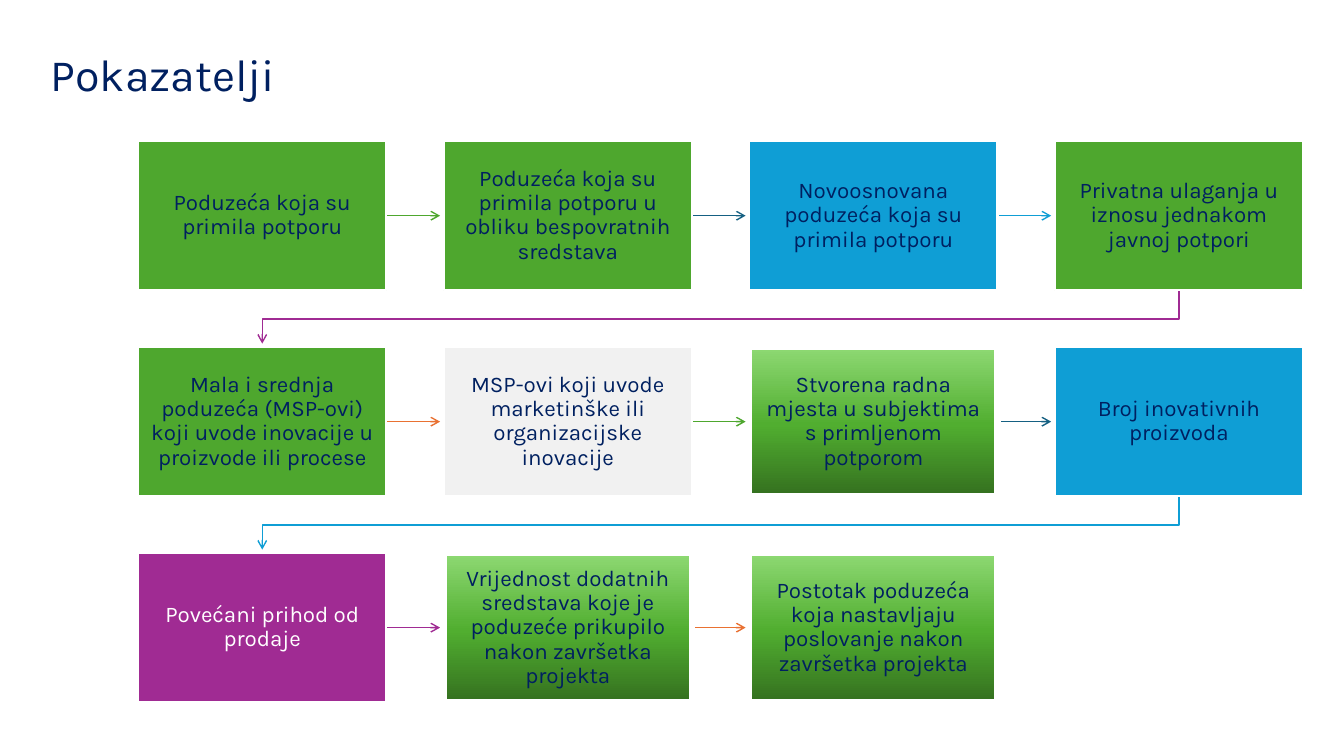
"""Build the slide of support indicators as a snaking flow of boxes."""
from dataclasses import dataclass
from itertools import cycle

from lxml import etree
from pptx import Presentation
from pptx.dml.color import RGBColor
from pptx.enum import shapes, text
from pptx.oxml import parse_xml
from pptx.oxml.ns import nsdecls, qn
from pptx.util import Cm, Pt

TITLE = "Pokazatelji"
INDICATORS = [
    ("Poduzeća koja su primila potporu", "green"),
    ("Poduzeća koja su primila potporu u obliku bespovratnih sredstava", "green"),
    ("Novoosnovana poduzeća koja su primila potporu", "blue"),
    ("Privatna ulaganja u iznosu jednakom javnoj potpori", "green"),
    ("Mala i srednja poduzeća (MSP-ovi) koji uvode inovacije u proizvode ili procese", "green"),
    ("MSP-ovi koji uvode marketinške ili organizacijske inovacije", "grey"),
    ("Stvorena radna mjesta u subjektima s primljenom potporom", "gradient"),
    ("Broj inovativnih proizvoda", "blue"),
    ("Povećani prihod od prodaje", "purple"),
    ("Vrijednost dodatnih sredstava koje je poduzeće prikupilo nakon završetka projekta", "gradient"),
    ("Postotak poduzeća koja nastavljaju poslovanje nakon završetka projekta", "gradient"),
]
ARROW_COLOURS = ["green", "teal", "blue", "purple", "orange"]


@dataclass(frozen=True)
class Theme:
    """Colours, fonts and type sizes."""
    font: str = "Karla"
    title_size: int = 32
    box_size: int = 16
    navy: str = "002060"
    white: str = "FFFFFF"
    green: str = "4EA72E"
    teal: str = "156082"
    blue: str = "0F9ED5"
    purple: str = "A02B93"
    orange: str = "E97132"
    grey: str = "F1F1F1"
    gradient: tuple = ((0, "34701F"), (48, "51AE30"), (100, "8ED973"))

    def colour(self, name):
        """Return a named colour."""
        return RGBColor.from_string(getattr(self, name))


THEME = Theme()
COLUMNS = 4
LEFT, TOP = Cm(3.48), Cm(3.56)
WIDTH, HEIGHT = Cm(6.26), Cm(3.75)
COLUMN_STEP, ROW_STEP = Cm(7.7), Cm(5.19)
ARROW_LENGTH, ELBOW_DROP = Cm(1.35), Cm(0.73)


def position(index):
    """Return the left and top of a box in the grid."""
    row, column = divmod(index, COLUMNS)
    return LEFT + column * COLUMN_STEP, TOP + row * ROW_STEP


def write(shape, words, size, colour, alignment):
    """Set the one paragraph of a shape."""
    frame = shape.text_frame
    frame.text = words
    frame.word_wrap = True
    frame.auto_size = text.MSO_AUTO_SIZE.NONE
    frame.vertical_anchor = text.MSO_ANCHOR.MIDDLE
    paragraph = frame.paragraphs[0]
    paragraph.alignment = alignment
    paragraph.line_spacing = 0.9
    paragraph.font.name = THEME.font
    paragraph.font.size = Pt(size)
    paragraph.font.color.rgb = THEME.colour(colour)
    return frame


def fill_gradient(shape):
    """Fill a shape with the upward gradient."""
    stops = "".join(
        f'<a:gs pos="{place * 1000}"><a:srgbClr val="{colour}"/></a:gs>'
        for place, colour in THEME.gradient
    )
    gradient = parse_xml(
        f'<a:gradFill {nsdecls("a")} rotWithShape="1"><a:gsLst>{stops}</a:gsLst>'
        '<a:lin ang="16200000" scaled="0"/></a:gradFill>'
    )
    shape.fill.background()
    properties = shape._element.spPr
    properties.replace(properties.find(qn("a:noFill")), gradient)


def add_arrow(slide, index, colour):
    """Draw the arrow from one box to the next."""
    left, top = position(index)
    if (index + 1) % COLUMNS:
        start, middle = left + WIDTH, top + HEIGHT // 2
        arrow = slide.shapes.add_connector(
            shapes.MSO_CONNECTOR.STRAIGHT, start, middle, start + ARROW_LENGTH, middle
        )
        etree.SubElement(arrow._element.spPr, qn("a:effectLst"))
    else:
        start, bottom = left + WIDTH // 2, top + HEIGHT
        end = LEFT + WIDTH // 2
        turn = bottom + ELBOW_DROP
        builder = slide.shapes.build_freeform(start, bottom)
        builder.add_line_segments(
            [(start, turn), (end, turn), (end, bottom + ARROW_LENGTH)], close=False
        )
        arrow = builder.convert_to_shape()
        arrow.fill.background()
        arrow.shadow.inherit = False
    arrow.line.width = Pt(1)
    arrow.line.color.rgb = THEME.colour(colour)
    etree.SubElement(arrow.line._get_or_add_ln(), qn("a:tailEnd"), type="arrow")


def add_box(slide, index, words, fill):
    """Draw one indicator box."""
    box = slide.shapes.add_shape(
        shapes.MSO_SHAPE.RECTANGLE, *position(index), WIDTH, HEIGHT
    )
    box.shadow.inherit = False
    if fill == "gradient":
        fill_gradient(box)
    else:
        box.fill.solid()
        box.fill.fore_color.rgb = THEME.colour(fill)
    box.line.color.rgb = THEME.colour("white")
    box.line.width = Pt(4.5 if fill == "gradient" else 1.5)
    colour = "white" if fill == "purple" else "navy"
    frame = write(box, words, THEME.box_size, colour, text.PP_ALIGN.CENTER)
    frame.margin_left = frame.margin_right = Cm(0.31)
    frame.margin_top = frame.margin_bottom = Cm(0.33)


def main():
    """Build and save the presentation."""
    presentation = Presentation()
    presentation.slide_width, presentation.slide_height = Cm(33.87), Cm(19.05)
    slide = presentation.slides.add_slide(presentation.slide_layouts[5])
    title = slide.shapes.title
    title.left, title.top, title.width, title.height = Cm(1.02), Cm(0), Cm(26.14), Cm(3.89)
    write(title, TITLE, THEME.title_size, "navy", text.PP_ALIGN.LEFT)
    for index, colour in zip(range(len(INDICATORS) - 1), cycle(ARROW_COLOURS)):
        add_arrow(slide, index, colour)
    for index, (words, fill) in enumerate(INDICATORS):
        add_box(slide, index, words, fill)
    presentation.save("out.pptx")


if __name__ == "__main__":
    main()
